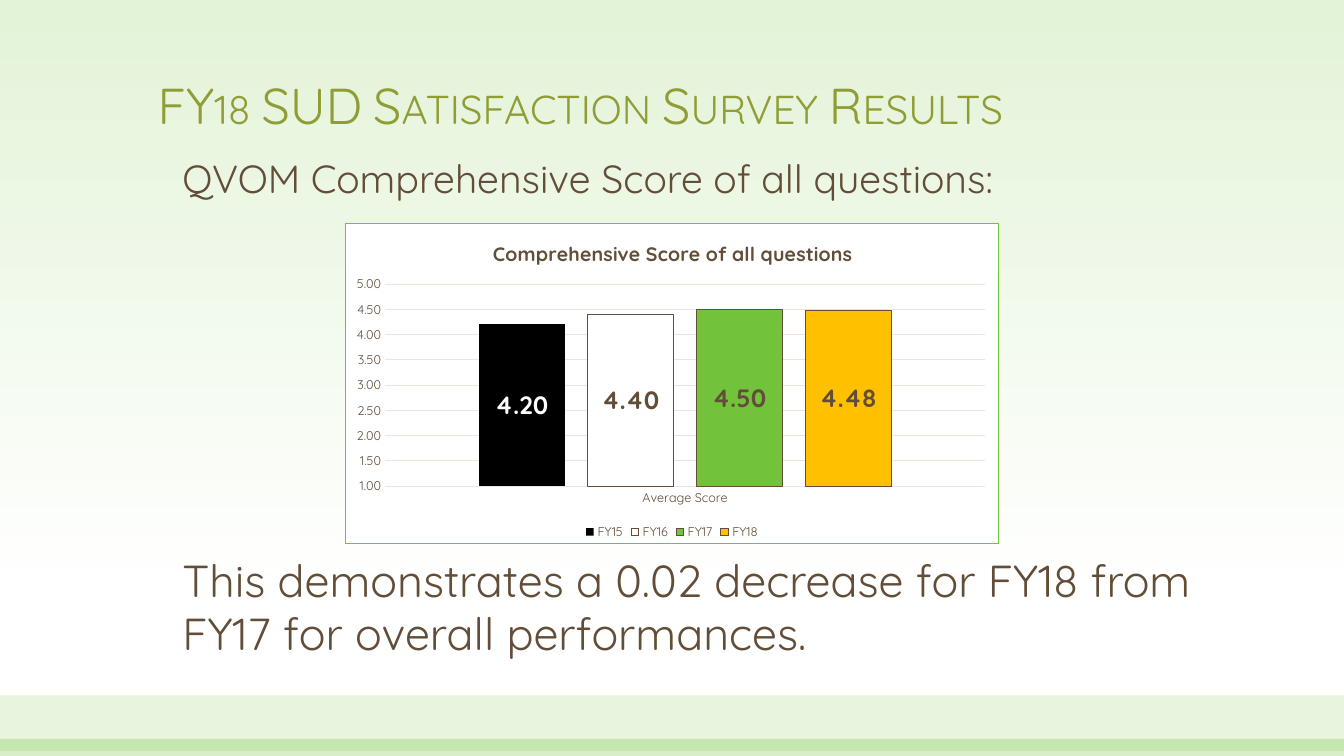
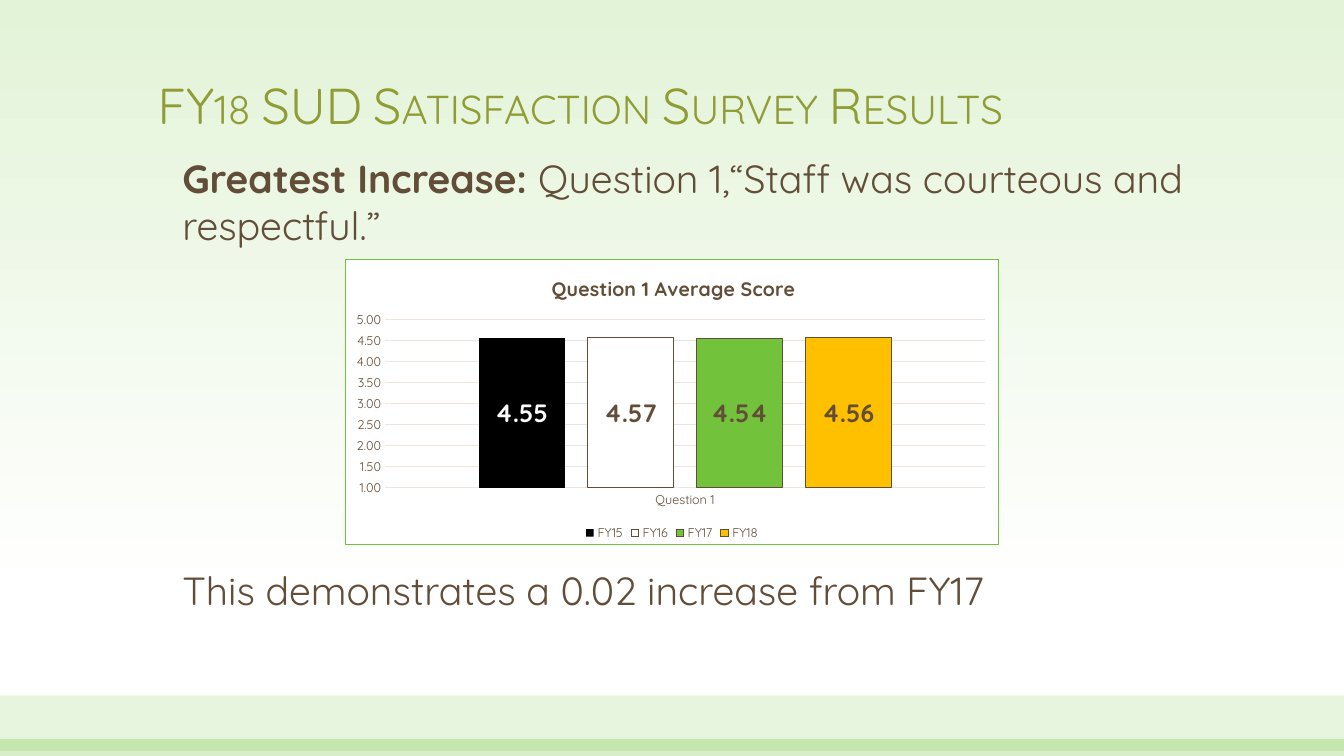
"""Build two slides of satisfaction survey results, each with a score chart."""
from lxml.etree import SubElement
from pptx import Presentation
from pptx.chart.data import CategoryChartData
from pptx.dml.color import RGBColor
from pptx.enum.chart import XL_CHART_TYPE, XL_LABEL_POSITION, XL_LEGEND_POSITION, XL_TICK_MARK
from pptx.enum.shapes import MSO_SHAPE
from pptx.enum.text import MSO_ANCHOR
from pptx.oxml import parse_xml
from pptx.oxml.ns import nsdecls, qn
from pptx.util import Inches, Pt

FONT = "Quicksand"
MINT = RGBColor(0xE3, 0xF3, 0xD8)
WHITE = RGBColor(0xFF, 0xFF, 0xFF)
BLACK = RGBColor(0x00, 0x00, 0x00)
GREEN = RGBColor(0x72, 0xC2, 0x3C)
OLIVE = RGBColor(0x90, 0x9D, 0x35)
BROWN = RGBColor(0x62, 0x4D, 0x38)
SAND = RGBColor(0xEC, 0xE4, 0xDD)
AMBER = RGBColor(0xFF, 0xC0, 0x00)

HEADING = "FY18 SUD Satisfaction Survey Results"
HEADING_AREA = (11, 6.4, 78, 15.87)
TEXT_LEFT, TEXT_WIDTH = 12.83, 77.5
CHART_WIDTH = 48.6
CHART_LEFT = (100 - CHART_WIDTH) / 2
BANDS = [(92, 7.33, 17), (97.73, 2.27, 28)]
YEARS = [
    ("FY15", BLACK, None, WHITE),
    ("FY16", WHITE, BROWN, BROWN),
    ("FY17", GREEN, BROWN, BROWN),
    ("FY18", AMBER, BROWN, BROWN),
]
RESULTS = [
    {
        "statements": [
            (72.4, 15.73, 32, [("This demonstrates a 0.02 decrease for FY18 from FY17 for overall performances.", False)]),
            (19.73, 7.6, 28, [("QVOM Comprehensive Score of all questions:", False)]),
        ],
        "chart_rows": (29.47, 42.53),
        "chart_title": "Comprehensive Score of all questions",
        "title_place": {"x": 0.22, "y": 0.04},
        "plot_place": {"x": 0.06, "y": 0.19, "w": 0.92, "h": 0.63},
        "category": "Average Score",
        "scores": [4.2, 4.4, 4.5, 4.48],
    },
    {
        "statements": [
            (74.27, 7.6, 28, [("This demonstrates a 0.02 increase from FY17", False)]),
            (19.73, 13.87, 28, [("Greatest Increase: ", True),
                                ("Question 1,“Staff was courteous and respectful.”", False)]),
        ],
        "chart_rows": (34.27, 37.87),
        "chart_title": "Question 1 Average Score",
        "title_place": {"x": 0.31, "y": 0.04},
        "plot_place": {"x": 0.06, "y": 0.21, "w": 0.92, "h": 0.59},
        "category": "Question 1",
        "scores": [4.55, 4.57, 4.54, 4.56],
    },
]

deck = Presentation()
deck.slide_width, deck.slide_height = Inches(13.33), Inches(7.5)


def area(left, top, width, height):
    """Turn percentages of the slide into lengths."""
    across, down = deck.slide_width / 100, deck.slide_height / 100
    return int(left * across), int(top * down), int(width * across), int(height * down)


def style(font, size, color, bold=False):
    """Set the typeface, size, colour and weight of a font."""
    font.name, font.size, font.bold = FONT, Pt(size), bold
    font.color.rgb = color


backdrop = deck.slide_master.background.fill
backdrop.gradient()
backdrop.gradient_angle = 270
for stop, color, position in zip(backdrop.gradient_stops, (MINT, WHITE), (0, 0.79)):
    stop.color.rgb = color
    stop.position = position

for result in RESULTS:
    slide = deck.slides.add_slide(deck.slide_layouts[6])

    for top, height, opacity in BANDS:
        band = slide.shapes.add_shape(MSO_SHAPE.RECTANGLE, *area(0, top, 100, height))
        band.shadow.inherit = False
        band.fill.solid()
        band.fill.fore_color.rgb = GREEN
        band.line.fill.background()
        tint = band.element.spPr.find(".//" + qn("a:srgbClr"))
        SubElement(tint, qn("a:alpha"), val=str(opacity * 1000))

    heading = slide.shapes.add_textbox(*area(*HEADING_AREA)).text_frame
    heading.word_wrap = True
    heading.vertical_anchor = MSO_ANCHOR.MIDDLE
    heading.text = HEADING
    heading.paragraphs[0].line_spacing = 0.9
    heading_run = heading.paragraphs[0].runs[0]
    style(heading_run.font, 36, OLIVE)
    heading_run._r.get_or_add_rPr().set("cap", "small")

    for top, height, size, phrases in result["statements"]:
        statement = slide.shapes.add_textbox(*area(TEXT_LEFT, top, TEXT_WIDTH, height)).text_frame
        statement.word_wrap = True
        for words, bold in phrases:
            phrase = statement.paragraphs[0].add_run()
            phrase.text = words
            style(phrase.font, size, BROWN, bold)

    scores = CategoryChartData(number_format="0.00")
    scores.categories = [result["category"]]
    for (year, *_), score in zip(YEARS, result["scores"]):
        scores.add_series(year, [score])
    chart_top, chart_height = result["chart_rows"]
    chart = slide.shapes.add_chart(
        XL_CHART_TYPE.COLUMN_CLUSTERED,
        *area(CHART_LEFT, chart_top, CHART_WIDTH, chart_height), scores).chart
    style(chart.font, 10, BROWN)

    chart.has_title = True
    chart.chart_title.include_in_layout = False
    chart.chart_title.text_frame.text = result["chart_title"]
    style(chart.chart_title.text_frame.paragraphs[0].runs[0].font, 14, BROWN, True)
    chart.has_legend = True
    chart.legend.position = XL_LEGEND_POSITION.BOTTOM
    chart.legend.include_in_layout = False
    style(chart.legend.font, 9, BROWN)

    for axis in (chart.category_axis, chart.value_axis):
        axis.major_tick_mark = axis.minor_tick_mark = XL_TICK_MARK.NONE
        style(axis.tick_labels.font, 9, BROWN)
    score_axis = chart.value_axis
    score_axis.minimum_scale, score_axis.maximum_scale, score_axis.major_unit = 1, 5, 0.5
    score_axis.tick_labels.number_format = "0.00"
    score_axis.tick_labels.number_format_is_linked = False
    score_axis.format.line.fill.background()
    for rule in (chart.category_axis.format.line, score_axis.major_gridlines.format.line):
        rule.color.rgb = SAND
        rule.width = Pt(0.75)

    columns = chart.plots[0]
    columns.vary_by_categories = False
    columns.gap_width, columns.overlap = 219, -27
    for column, (_, fill, outline, label_color) in zip(columns.series, YEARS):
        column.invert_if_negative = False
        column.format.fill.solid()
        column.format.fill.fore_color.rgb = fill
        if outline is None:
            column.format.line.fill.background()
        else:
            column.format.line.color.rgb = outline
            column.format.line.width = Pt(0.75)
        labels = column.data_labels
        labels.show_value = True
        labels.position = XL_LABEL_POSITION.CENTER
        labels.number_format = "0.00"
        labels.number_format_is_linked = False
        style(labels.font, 18, label_color, True)

    chart_body = chart.element.find(qn("c:chart"))
    for part, order, place, target in (("c:title", 1, result["title_place"], None),
                                       ("c:plotArea", 0, result["plot_place"], "inner")):
        holder = chart_body.find(qn(part))
        layout = holder.find(qn("c:layout"))
        if layout is None:
            layout = parse_xml(f"<c:layout {nsdecls('c')}/>")
            holder.insert(order, layout)
        manual = SubElement(layout, qn("c:manualLayout"))
        if target:
            SubElement(manual, qn("c:layoutTarget"), val=target)
        for mode in ("xMode", "yMode"):
            SubElement(manual, qn("c:" + mode), val="edge")
        for side, share in place.items():
            SubElement(manual, qn("c:" + side), val=str(share))
    chart_body.addnext(parse_xml(
        f'<c:spPr {nsdecls("c", "a")}>'
        f'<a:solidFill><a:srgbClr val="{WHITE}"/></a:solidFill>'
        f'<a:ln w="{Pt(0.75)}"><a:solidFill><a:srgbClr val="{GREEN}"/></a:solidFill></a:ln>'
        '</c:spPr>'))

deck.save("out.pptx")
